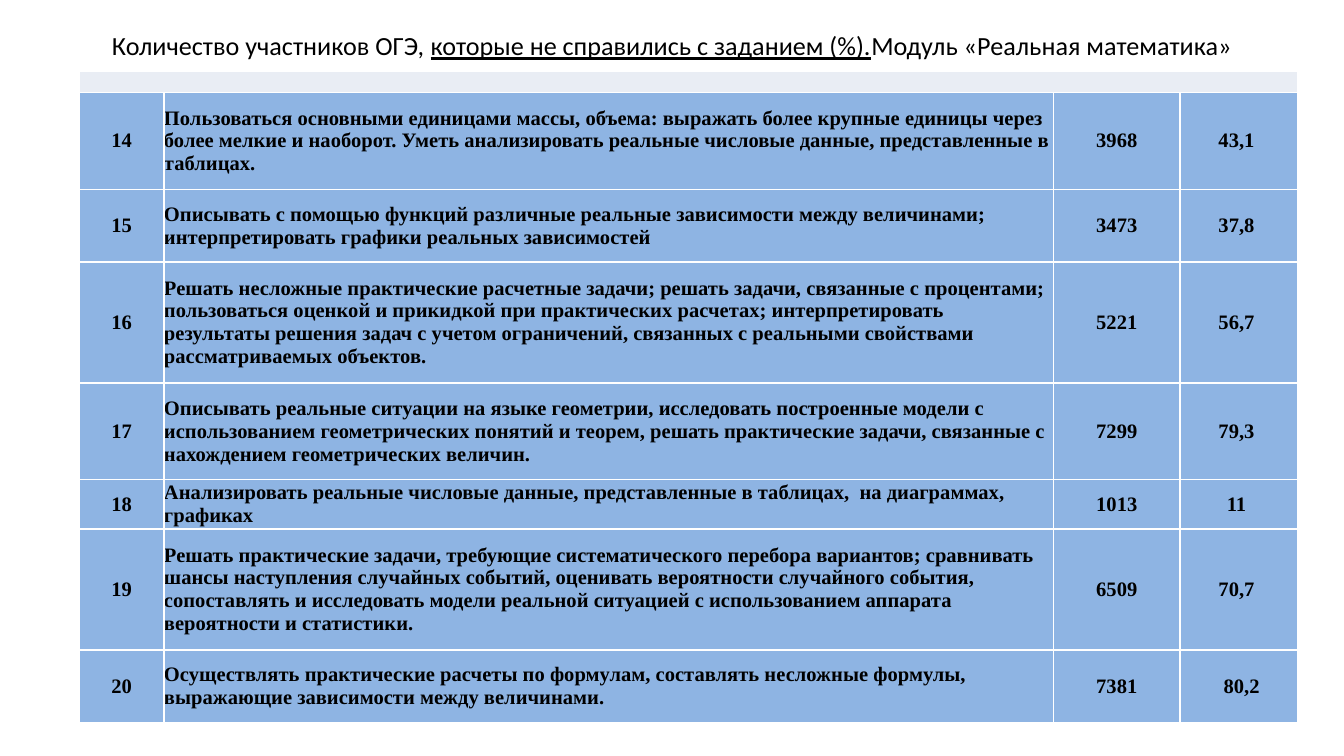
from dataclasses import dataclass

from lxml import etree
from pptx import Presentation
from pptx.dml.color import RGBColor
from pptx.enum.text import MSO_ANCHOR, PP_ALIGN
from pptx.oxml.ns import qn
from pptx.util import Inches, Pt

CENTER, LEFT = PP_ALIGN.CENTER, PP_ALIGN.LEFT
MIDDLE, TOP = MSO_ANCHOR.MIDDLE, MSO_ANCHOR.TOP

COLORS = {"text": "000000", "header": "E9EDF4", "row": "8EB4E3", "border": "FFFFFF"}
TITLE_FONT, TABLE_FONT = "Calibri", "Times New Roman"
SLIDE_WIDTH = Inches(10)
SLIDE_HEIGHT = SLIDE_WIDTH * 9 // 16
COLUMN_WIDTHS = (0.63, 6.62, 0.94, 0.88)
COLUMN_ALIGNMENTS = (CENTER, LEFT, CENTER, CENTER)
HEADER_HEIGHT = 0.16


@dataclass
class Task:
    number: str
    skill: str
    failed: str
    percent: str
    height: float


TITLE_PARTS = (
    ("Количество участников ОГЭ, ", False),
    ("которые не справились с заданием (%).", True),
    ("Модуль «Реальная математика»", False),
)

TASKS = (
    Task("14", "Пользоваться основными единицами массы, объема: выражать более крупные единицы "
         "через более мелкие и наоборот. Уметь анализировать реальные числовые данные, "
         "представленные в таблицах.", "3968", "43,1 ", 0.72),
    Task("15", "Описывать с помощью функций различные реальные зависимости между величинами; "
         "интерпретировать графики реальных зависимостей", "3473", "37,8 ", 0.54),
    Task("16", "Решать несложные практические расчетные задачи; решать задачи, связанные с "
         "процентами; пользоваться оценкой и прикидкой при практических расчетах; "
         "интерпретировать результаты решения задач с учетом ограничений, связанных с "
         "реальными свойствами рассматриваемых объектов.", "5221", "56,7 ", 0.9),
    Task("17", "Описывать реальные ситуации на языке геометрии, исследовать построенные модели "
         "с использованием геометрических понятий и теорем, решать практические задачи, "
         "связанные с нахождением геометрических величин.", "7299", "79,3 ", 0.72),
    Task("18", "Анализировать реальные числовые данные, представленные в таблицах,  на "
         "диаграммах, графиках", "1013", "11 ", 0.36),
    Task("19", "Решать практические задачи, требующие систематического перебора вариантов; "
         "сравнивать шансы наступления случайных событий, оценивать вероятности случайного "
         "события, сопоставлять и исследовать модели реальной ситуацией с использованием "
         "аппарата вероятности и статистики.", "6509", "70,7 ", 0.9),
    Task("20", "Осуществлять практические расчеты по формулам, составлять несложные формулы, "
         "выражающие зависимости между величинами.", "7381", " 80,2", 0.54),
)


def color(name: str) -> RGBColor:
    return RGBColor.from_string(COLORS[name])


def format_run(run, font: str, size: float, bold: bool = False, underline: bool = False) -> None:
    run.font.name = font
    run.font.size = Pt(size)
    run.font.bold = bold
    run.font.underline = underline
    run.font.color.rgb = color("text")


def format_cell(cell, fill: str) -> None:
    """Zero margins, white borders and a solid fill."""
    cell.margin_left = cell.margin_right = cell.margin_top = cell.margin_bottom = 0
    cell.vertical_anchor = MIDDLE
    properties = cell._tc.get_or_add_tcPr()
    for side in ("lnL", "lnR", "lnT", "lnB"):
        line = etree.SubElement(properties, qn(f"a:{side}"), w=str(int(Pt(1))))
        solid = etree.SubElement(line, qn("a:solidFill"))
        etree.SubElement(solid, qn("a:srgbClr"), val=COLORS["border"])
    cell.fill.solid()
    cell.fill.fore_color.rgb = color(fill)


def add_title(slide) -> None:
    box = slide.shapes.add_textbox(Inches(0.5), Inches(0.22), Inches(9), Inches(0.94))
    text_frame = box.text_frame
    text_frame.word_wrap = True
    text_frame.vertical_anchor = TOP
    text_frame.margin_top = 0
    paragraph = text_frame.paragraphs[0]
    paragraph.alignment = CENTER
    for text, underline in TITLE_PARTS:
        run = paragraph.add_run()
        run.text = text
        format_run(run, TITLE_FONT, 14, underline=underline)


def add_task_table(slide) -> None:
    height = HEADER_HEIGHT + sum(task.height for task in TASKS)
    table = slide.shapes.add_table(
        len(TASKS) + 1, len(COLUMN_WIDTHS),
        Inches(0.59), Inches(0.53), Inches(sum(COLUMN_WIDTHS)), Inches(height)).table
    table.first_row = table.horz_banding = False
    for column, width in zip(table.columns, COLUMN_WIDTHS):
        column.width = Inches(width)

    # Empty merged header strip; small type keeps it thin
    table.rows[0].height = Inches(HEADER_HEIGHT)
    for cell in table.rows[0].cells:
        format_cell(cell, "header")
        etree.SubElement(cell.text_frame.paragraphs[0]._p, qn("a:endParaRPr"), sz="800")
    table.cell(0, 0).merge(table.cell(0, len(COLUMN_WIDTHS) - 1))

    # One row per task
    for row_index, task in enumerate(TASKS, start=1):
        row = table.rows[row_index]
        row.height = Inches(task.height)
        values = (task.number, task.skill, task.failed, task.percent)
        for cell, value, alignment in zip(row.cells, values, COLUMN_ALIGNMENTS):
            format_cell(cell, "row")
            paragraph = cell.text_frame.paragraphs[0]
            paragraph.text = value
            paragraph.alignment = alignment
            format_run(paragraph.runs[0], TABLE_FONT, 11, bold=True)


def main() -> None:
    presentation = Presentation()
    presentation.slide_width = SLIDE_WIDTH
    presentation.slide_height = SLIDE_HEIGHT
    slide = presentation.slides.add_slide(presentation.slide_layouts[6])
    add_title(slide)
    add_task_table(slide)
    presentation.save("out.pptx")


if __name__ == "__main__":
    main()
